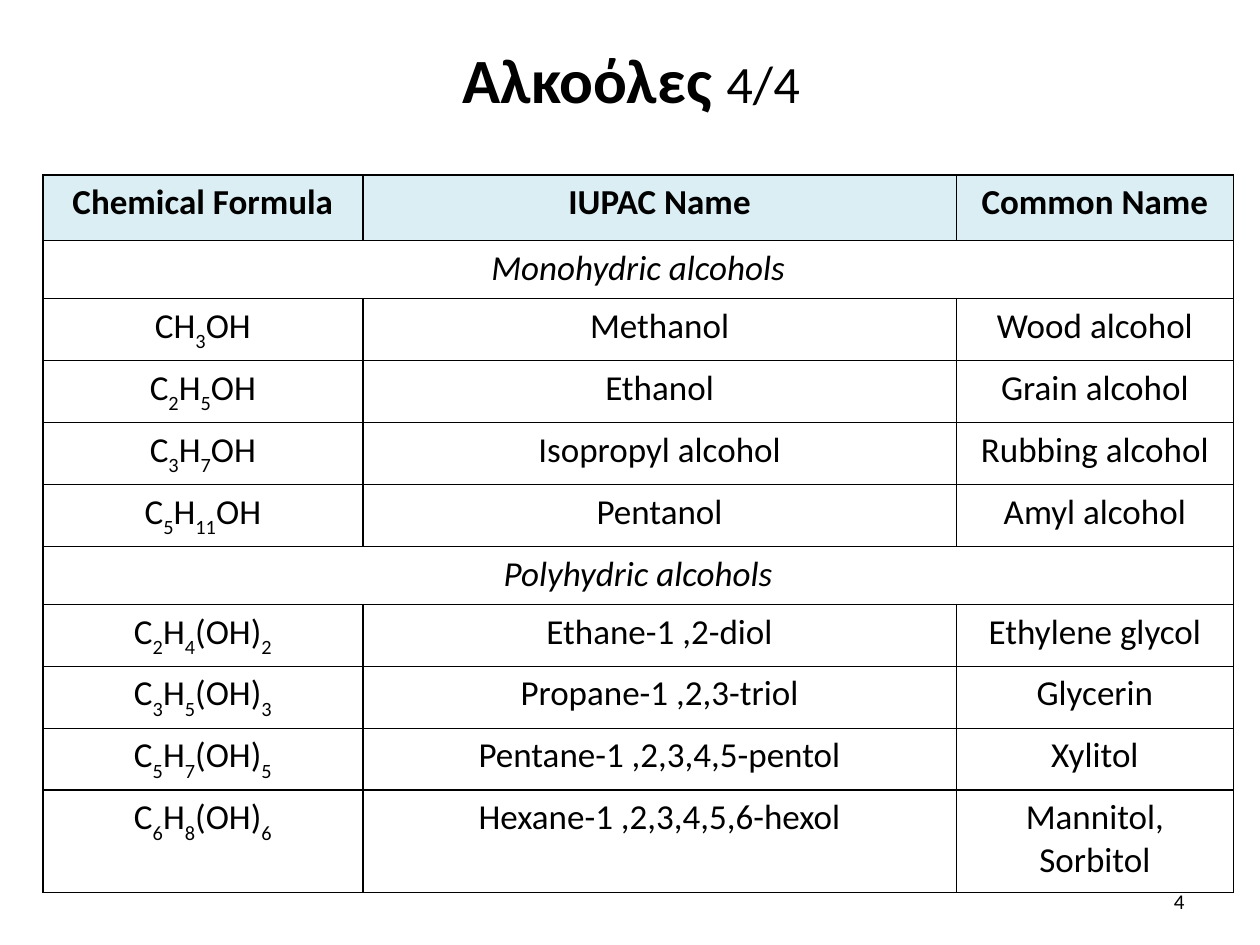
"""Build the slide with the table of monohydric and polyhydric alcohols."""
from itertools import groupby

from lxml.etree import SubElement
from pptx import Presentation
from pptx.dml.color import RGBColor
from pptx.enum.text import MSO_ANCHOR as Anchor, PP_ALIGN as Align
from pptx.oxml.ns import qn
from pptx.util import Inches, Pt

BLACK, HEADER_BLUE = "000000", "DBEEF4"
COLUMNS = [2.54, 4.71, 2.2]
ROWS = [0.52] + [0.46] * 9 + [0.81]
ALCOHOLS = [
    (" Chemical Formula ", " IUPAC Name ", " Common Name "),
    ("Monohydric alcohols",),
    ("CH3OH", "Methanol", "Wood alcohol"),
    ("C2H5OH", "Ethanol", "Grain alcohol"),
    ("C3H7OH", "Isopropyl alcohol", "Rubbing alcohol"),
    ("C5H11OH", "Pentanol", "Amyl alcohol"),
    ("Polyhydric alcohols",),
    ("C2H4(OH)2", "Ethane-1 ,2-diol", "Ethylene glycol"),
    ("C3H5(OH)3", "Propane-1 ,2,3-triol", "Glycerin"),
    ("C5H7(OH)5", "Pentane-1 ,2,3,4,5-pentol", "Xylitol"),
    ("C6H8(OH)6", "Hexane-1 ,2,3,4,5,6-hexol", "Mannitol, Sorbitol"),
]


def style(para, size, align, bold=False, italic=False):
    """Format a whole paragraph."""
    para.alignment = align
    font = para.font
    font.name, font.size, font.bold, font.italic = "Calibri", Pt(size), bold, italic
    font.color.rgb = RGBColor.from_string(BLACK)


def draw_borders(cell):
    """Draw a thin line on all four sides of a cell."""
    for side in "LRTB":
        line = SubElement(cell._tc.get_or_add_tcPr(), qn(f"a:ln{side}"), w=str(Pt(1)))
        SubElement(SubElement(line, qn("a:solidFill")), qn("a:srgbClr"), val=BLACK)


deck = Presentation()
deck.slide_width, deck.slide_height = Inches(10), Inches(7.5)
page = deck.slides.add_slide(deck.slide_layouts[5])

title = page.shapes.title
title.left, title.top, title.width, title.height = map(Inches, (0.51, 0.13, 9, 0.99))
title.text_frame.vertical_anchor = Anchor.MIDDLE
para = title.text_frame.paragraphs[0]
style(para, 36, Align.CENTER, bold=True)
para.add_run().text = "Αλκοόλες "
counter = para.add_run()
counter.text = "4/4"
counter.font.size, counter.font.bold = Pt(30), False

frame = page.shapes.add_table(len(ROWS), len(COLUMNS), Inches(0.34), Inches(1.39),
                              Inches(sum(COLUMNS)), Inches(sum(ROWS)))
table = frame.table
table.horz_banding = False
for column, width in zip(table.columns, COLUMNS):
    column.width = Inches(width)
for row, height in zip(table.rows, ROWS):
    row.height = Inches(height)

for r, texts in enumerate(ALCOHOLS):
    is_header, is_group = r == 0, len(texts) == 1
    for cell in table.rows[r].cells:
        draw_borders(cell)
        if is_header:
            cell.fill.solid()
            cell.fill.fore_color.rgb = RGBColor.from_string(HEADER_BLUE)
        else:
            cell.fill.background()
    if is_group:
        table.cell(r, 0).merge(table.cell(r, len(COLUMNS) - 1))
    for c, text in enumerate(texts):
        para = table.cell(r, c).text_frame.paragraphs[0]
        style(para, 20, Align.CENTER, bold=is_header, italic=is_group)
        if c > 0:
            para.add_run().text = text
            continue
        for is_digit, letters in groupby(text, str.isdigit):
            span = para.add_run()
            span.text = "".join(letters)
            if is_digit:
                span.font._element.set("baseline", "-30000")

box = page.shapes.add_textbox(*map(Inches, (7.17, 6.95, 2.33, 0.4)))
box.text_frame.word_wrap = True
box.text_frame.vertical_anchor = Anchor.MIDDLE
para = box.text_frame.paragraphs[0]
para.text = "4"
style(para, 12, Align.RIGHT)

deck.save("out.pptx")
